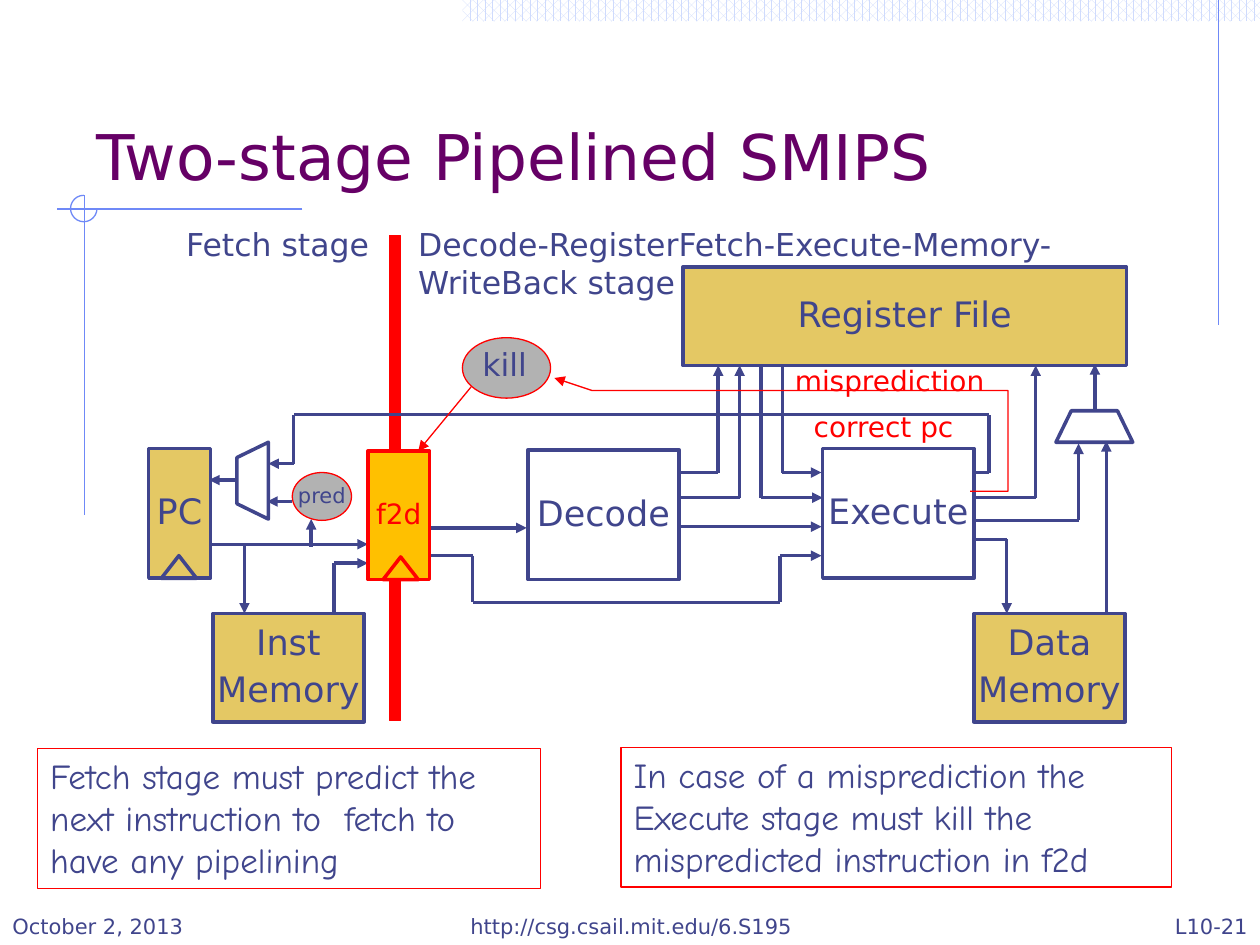
from dataclasses import dataclass
from itertools import pairwise
from typing import Optional

from lxml import etree
from pptx import Presentation
from pptx import util as u
from pptx.dml.color import RGBColor
from pptx.enum import dml, shapes, text
from pptx.oxml import ns

COLUMNS, ROWS = 100, 75
SLIDE_WIDTH, SLIDE_HEIGHT = u.Inches(10), u.Inches(7.5)
COLUMN, ROW = SLIDE_WIDTH / COLUMNS, SLIDE_HEIGHT / ROWS

INDIGO = RGBColor(0x40, 0x45, 0x8C)
PURPLE = RGBColor(0x66, 0x00, 0x66)
RED = RGBColor(0xFF, 0x00, 0x00)
SAND = RGBColor(0xE4, 0xC8, 0x64)
AMBER = RGBColor(0xFF, 0xC0, 0x00)
GRAY = RGBColor(0xB2, 0xB2, 0xB2)
WHITE = RGBColor(0xFF, 0xFF, 0xFF)
SKY = RGBColor(0x6F, 0x89, 0xF7)
PALE = RGBColor(0xCF, 0xDB, 0xFD)
SANS, HAND = "DejaVu Sans", "Comic Neue"
THIN, THICK = 0.75, 2
PRESET = shapes.MSO_SHAPE
LEFT, CENTER, RIGHT = text.PP_ALIGN.LEFT, text.PP_ALIGN.CENTER, text.PP_ALIGN.RIGHT
TOP, MIDDLE, BOTTOM = text.MSO_ANCHOR.TOP, text.MSO_ANCHOR.MIDDLE, text.MSO_ANCHOR.BOTTOM
Box = tuple[float, float, float, float]


@dataclass(frozen=True)
class Block:
    box: Box
    label: str = ""
    fill: Optional[RGBColor] = None
    line: RGBColor = INDIGO
    width: float = THICK
    preset: shapes.MSO_SHAPE = PRESET.RECTANGLE
    size: int = 20
    ink: RGBColor = INDIGO
    turn: int = 0


@dataclass(frozen=True)
class Wire:
    points: tuple[tuple[float, float], ...]
    arrow: bool = True
    color: RGBColor = INDIGO
    width: float = THICK


@dataclass(frozen=True)
class Caption:
    box: Box
    words: str
    size: int = 18
    ink: RGBColor = INDIGO
    font: str = SANS
    align: text.PP_ALIGN = LEFT
    anchor: text.MSO_ANCHOR = TOP
    wrap: bool = True
    framed: bool = False


def place(box: Box) -> tuple[int, ...]:
    return tuple(round(n * unit) for n, unit in zip(box, (COLUMN, ROW) * 2))


def write(frame, words: str, size: int, ink: RGBColor, font: str, align, anchor, wrap: bool) -> None:
    frame.text = words
    frame.word_wrap = wrap
    frame.vertical_anchor = anchor
    for paragraph in frame.paragraphs:
        paragraph.alignment = align
        paragraph.font.size = u.Pt(size)
        for run in paragraph.runs:
            run.font.size, run.font.name = u.Pt(size), font
            run.font.color.rgb = ink


def add_tail_arrow(line_shape) -> None:
    outline = line_shape.line._get_or_add_ln()
    etree.SubElement(outline, ns.qn("a:tailEnd"), type="triangle")


def draw_block(slide, block: Block):
    shape = slide.shapes.add_shape(block.preset, *place(block.box))
    shape.shadow.inherit = False
    shape.rotation = block.turn
    if block.fill is None:
        shape.fill.background()
    else:
        shape.fill.solid()
        shape.fill.fore_color.rgb = block.fill
    shape.line.color.rgb = block.line
    shape.line.width = u.Pt(block.width)
    if block.label:
        write(shape.text_frame, block.label, block.size, block.ink, SANS, CENTER, MIDDLE, False)
        for order, paragraph in enumerate(shape.text_frame.paragraphs):
            paragraph.line_spacing = 0.9
            if order:
                paragraph.space_before = u.Pt(block.size / 4)
    return shape


def draw_wire(slide, wire: Wire) -> None:
    for start, end in pairwise(wire.points):
        segment = slide.shapes.add_connector(
            shapes.MSO_CONNECTOR.STRAIGHT, *place((*start, *end)))
        segment.line.color.rgb = wire.color
        segment.line.width = u.Pt(wire.width)
        etree.SubElement(segment._element.spPr, ns.qn("a:effectLst"))
        if wire.arrow and end == wire.points[-1]:
            add_tail_arrow(segment)


def draw_caption(slide, caption: Caption) -> None:
    if caption.framed:
        holder = draw_block(slide, Block(caption.box, line=RED, width=THIN))
    else:
        holder = slide.shapes.add_textbox(*place(caption.box))
    write(holder.text_frame, caption.words, caption.size, caption.ink,
          caption.font, caption.align, caption.anchor, caption.wrap)


def draw_backdrop(slide) -> None:
    strip = slide.shapes.add_shape(PRESET.RECTANGLE, *place((36.7, 0, 63.3, 1.7)))
    strip.shadow.inherit = False
    strip.fill.patterned()
    strip.fill.pattern = dml.MSO_PATTERN.PERCENT_60
    strip.fill.fore_color.rgb = PALE
    strip.fill.back_color.rgb = WHITE
    strip.line.fill.background()
    for points in (((96.7, 0), (96.7, 25.8)), ((24, 16.6), (4.5, 16.6)), ((6.7, 15.5), (6.7, 40.9))):
        draw_wire(slide, Wire(points, False, SKY, THIN))
    arc = draw_block(slide, Block((5.6, 15.5, 2.1, 2.1), line=SKY, width=THIN, preset=PRESET.ARC))
    arc.adjustments[0], arc.adjustments[1] = 0, 162


def draw_misprediction_path(slide) -> None:
    start, *rest = ((77.3, 38.8), (80.1, 38.7), (80, 31.4), (46.6, 31.2), (43.5, 30))
    builder = slide.shapes.build_freeform(*start, scale=(COLUMN, ROW))
    builder.add_line_segments(rest, close=False)
    route = builder.convert_to_shape()
    route.shadow.inherit = False
    route.fill.background()
    route.line.color.rgb = RED
    route.line.width = u.Pt(THIN)
    add_tail_arrow(route)


STAGES = (
    Block((36.7, 26.8, 7, 4.8), fill=GRAY, line=RED, width=THIN, preset=PRESET.OVAL),
    Block((30.9, 18.7, 0.9, 38.5), fill=RED, line=RED, width=THIN),
    Block((11.8, 35.6, 4.9, 10.3), "PC", SAND),
    Block((41.9, 35.7, 12, 10.3), "Decode"),
    Block((54.2, 21.2, 35.2, 7.8), "Register File", SAND),
    Block((65.3, 35.6, 12, 10.3), "Execute"),
    Block((77.3, 48.7, 12, 8.6), "Data\nMemory", SAND),
    Block((16.9, 48.7, 12, 8.6), "Inst\nMemory", SAND),
)
WIRES = (
    Wire(((34.1, 44.1), (37.5, 44.1), (37.5, 47.8), (61.9, 47.8), (61.9, 44.1), (65.2, 44.1))),
    Wire(((54, 41.8), (65.2, 41.8))),
    Wire(((62.1, 28.9), (62.1, 37.5), (65.2, 37.5))),
    Wire(((60.4, 29), (60.4, 39.5), (65.3, 39.5))),
    Wire(((16.7, 43.2), (29.2, 43.2))),
    Wire(((19.4, 43.2), (19.4, 48.7))),
    Wire(((26.5, 48.6), (26.5, 44.7), (29.2, 44.7))),
    Wire(((77.2, 42.8), (79.9, 42.8), (79.9, 48.7))),
    Wire(((53.9, 37.5), (57, 37.5), (57, 29))),
    Wire(((53.9, 39.5), (58.7, 39.5), (58.7, 29))),
    Wire(((87.8, 48.6), (87.8, 35))),
    Wire(((86.9, 32.5), (86.9, 28.9))),
    Wire(((77.3, 39.5), (82.2, 39.5), (82.2, 29))),
    Wire(((77.2, 41.3), (85.6, 41.3), (85.6, 35.2))),
    Wire(((24.7, 43.4), (24.7, 41.2))),
    Wire(((18.8, 38.1), (16.6, 38.1))),
    Wire(((23.2, 39.8), (21.2, 39.8))),
    Wire(((77.3, 37.5), (78.5, 37.5), (78.5, 32.9), (23.3, 32.9), (23.3, 36.8), (21.3, 36.8))),
    Wire(((34.2, 41.9), (41.8, 41.9))),
)
OVERLAYS = (
    Block((83.8, 32.6, 6.1, 2.5), fill=WHITE, preset=PRESET.FLOWCHART_MANUAL_OPERATION, turn=180),
    Block((17, 36.9, 6.1, 2.5), fill=WHITE, preset=PRESET.FLOWCHART_MANUAL_OPERATION, turn=90),
    Block((23.2, 37.5, 4.7, 3.8), "pred", GRAY, RED, THIN, PRESET.OVAL, 12),
    Block((29.2, 35.8, 4.9, 10.2), "f2d", AMBER, RED, size=16, ink=RED),
    Block((12.8, 44.1, 2.8, 1.8), preset=PRESET.ISOSCELES_TRIANGLE),
    Block((30.4, 44.2, 2.8, 1.8), line=RED, preset=PRESET.ISOSCELES_TRIANGLE),
)
CAPTIONS = (
    Caption((6.7, 3.3, 85, 12.5), "Two-stage Pipelined SMIPS", 36, PURPLE, anchor=BOTTOM),
    Caption((3, 59.4, 39.9, 11.1), "Fetch stage must predict the next instruction to  fetch to have any pipelining",
            20, font=HAND, framed=True),
    Caption((13.8, 17.4, 16.6, 4), "Fetch stage", wrap=False),
    Caption((32.2, 17.4, 61.6, 7.1), "Decode-RegisterFetch-Execute-Memory-WriteBack stage"),
    Caption((49.3, 59.3, 43.7, 11.1),
            "In case of a misprediction the Execute stage must kill the mispredicted instruction in f2d",
            20, font=HAND, framed=True),
    Caption((37.3, 26.9, 5.6, 4), "kill", wrap=False),
    Caption((62.1, 28.4, 17.2, 3.7), "misprediction", 16, RED, wrap=False),
    Caption((63.6, 32, 13.2, 3.7), "correct pc", 16, RED, wrap=False),
    Caption((0, 70, 20.8, 5), "October 2, 2013", 12, anchor=BOTTOM),
    Caption((33.6, 70, 33, 5), "http://csg.csail.mit.edu/6.S195", 12, align=CENTER, anchor=BOTTOM),
    Caption((79.2, 70, 20.8, 5), "L10-21", 12, align=RIGHT, anchor=BOTTOM),
)


def main() -> None:
    deck = Presentation()
    deck.slide_width, deck.slide_height = SLIDE_WIDTH, SLIDE_HEIGHT
    slide = deck.slides.add_slide(deck.slide_layouts[6])
    draw_backdrop(slide)
    for draw, items in ((draw_block, STAGES), (draw_wire, WIRES),
                        (draw_block, OVERLAYS), (draw_caption, CAPTIONS)):
        for item in items:
            draw(slide, item)
    draw_misprediction_path(slide)
    draw_wire(slide, Wire(((37.4, 30.7), (33.2, 35.8)), color=RED, width=THIN))
    deck.save("out.pptx")


if __name__ == "__main__":
    main()
